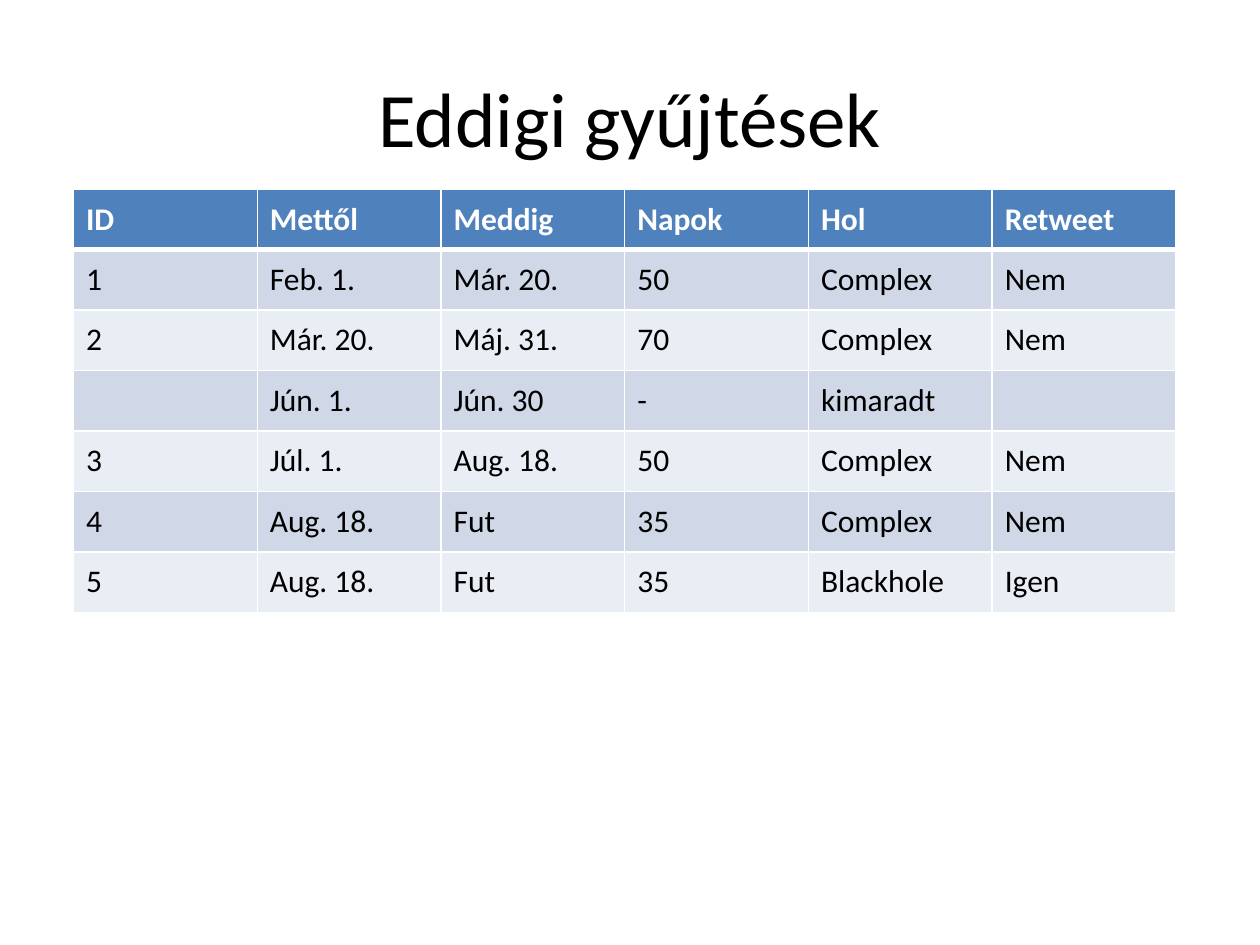
"""Build the slide that lists the collection runs so far."""
from dataclasses import dataclass

from lxml.etree import SubElement
from pptx import Presentation
from pptx.dml.color import RGBColor as Color
from pptx.enum.text import MSO_ANCHOR as Anchor, PP_ALIGN as Align
from pptx.oxml.ns import qn
from pptx.util import Pt


@dataclass(frozen=True)
class Theme:
    font: str = "Calibri"
    big: float = 44
    body: float = 18
    ink: str = "000000"
    white: str = "FFFFFF"
    head: str = "4F81BD"
    bands: tuple[str, str] = ("D0D8E8", "E9EDF4")
    thin: float = 1
    thick: float = 3


@dataclass(frozen=True)
class Grid:
    left: float
    top: float
    col: float
    row: float


@dataclass(frozen=True)
class Look:
    fill: str
    ink: str
    bold: bool
    above: float
    below: float


THEME = Theme()
GRID = Grid(left=42, top=108, col=105, row=34.56)
TITLE = "Eddigi gyűjtések"
ROWS = (
    ("ID", "Mettől", "Meddig", "Napok", "Hol", "Retweet"),
    ("1", "Feb. 1.", "Már. 20.", "50", "Complex", "Nem"),
    ("2", "Már. 20.", "Máj. 31.", "70", "Complex", "Nem"),
    ("", "Jún. 1.", "Jún. 30", "-", "kimaradt", ""),
    ("3", "Júl. 1.", "Aug. 18.", "50", "Complex", "Nem"),
    ("4", "Aug. 18.", "Fut", "35", "Complex", "Nem"),
    ("5", "Aug. 18.", "Fut", "35", "Blackhole", "Igen"),
)


def add_run(para, text: str, size: float, ink: str, bold: bool = False) -> None:
    """Add one styled run to a paragraph."""
    run = para.add_run()
    run.text = text
    font = run.font
    font.name, font.size, font.bold = THEME.font, Pt(size), bold
    font.color.rgb = Color.from_string(ink)


def add_edge(cell, side: str, width: float) -> None:
    """Add a solid white border to one side of a cell."""
    props = cell._tc.get_or_add_tcPr()
    line = SubElement(props, qn(f"a:ln{side}"), w=str(Pt(width)))
    fill = SubElement(line, qn("a:solidFill"))
    SubElement(fill, qn("a:srgbClr"), val=THEME.white)


def row_look(index: int) -> Look:
    """Return the style of a table row."""
    if index == 0:
        return Look(THEME.head, THEME.white, True, THEME.thin, THEME.thick)
    above = THEME.thick if index == 1 else THEME.thin
    band = THEME.bands[(index - 1) % 2]
    return Look(band, THEME.ink, False, above, THEME.thin)


def draw_cell(cell, text: str, look: Look) -> None:
    """Fill, border and write one cell."""
    edges = {"L": THEME.thin, "R": THEME.thin, "T": look.above, "B": look.below}
    for side, width in edges.items():
        add_edge(cell, side, width)
    cell.fill.solid()
    cell.fill.fore_color.rgb = Color.from_string(look.fill)
    cell.vertical_anchor = Anchor.MIDDLE
    if text:
        add_run(cell.text_frame.paragraphs[0], text, THEME.body, look.ink, look.bold)


def draw_title(slide, text: str) -> None:
    """Place and write the slide title."""
    box = slide.shapes.title
    box.left, box.top, box.width, box.height = Pt(36), Pt(21.6), Pt(648), Pt(90)
    box.text_frame.vertical_anchor = Anchor.MIDDLE
    para = box.text_frame.paragraphs[0]
    para.alignment = Align.CENTER
    add_run(para, text, THEME.big, THEME.ink)


def draw_table(slide, rows: tuple[tuple[str, ...], ...], grid: Grid) -> None:
    """Draw the table with equal rows and columns."""
    high, wide = len(rows), len(rows[0])
    frame = slide.shapes.add_table(
        high, wide, Pt(grid.left), Pt(grid.top),
        Pt(grid.col * wide), Pt(grid.row * high),
    )
    for r, row in enumerate(rows):
        look = row_look(r)
        for c, text in enumerate(row):
            draw_cell(frame.table.cell(r, c), text, look)


def main() -> None:
    """Build and save the deck."""
    deck = Presentation()
    deck.slide_width, deck.slide_height = Pt(720), Pt(540)
    slide = deck.slides.add_slide(deck.slide_layouts[5])
    draw_title(slide, TITLE)
    draw_table(slide, ROWS, GRID)
    deck.save("out.pptx")


if __name__ == "__main__":
    main()
